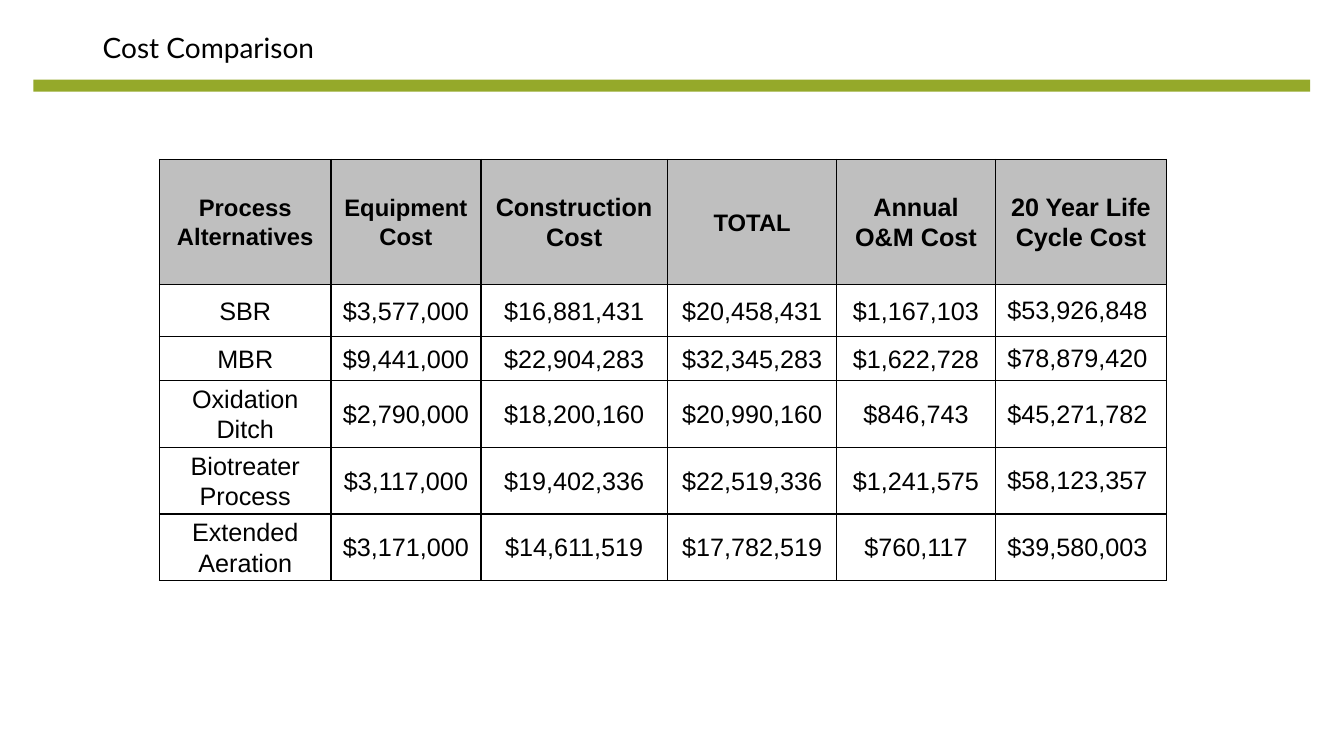
from lxml.etree import SubElement
from pptx import Presentation
from pptx.dml.color import RGBColor
from pptx.enum.shapes import MSO_SHAPE
from pptx.enum.text import MSO_ANCHOR, PP_ALIGN
from pptx.oxml.ns import qn
from pptx.util import Cm, Pt

BLACK = RGBColor(0x00, 0x00, 0x00)
GREEN = RGBColor(0x95, 0xA9, 0x2A)
GREY = RGBColor(0xBF, 0xBF, 0xBF)

COL_WIDTHS = [4.32, 3.78, 4.7, 4.27, 3.99, 4.32]
ROW_HEIGHTS = [3.15, 1.3, 1.12, 1.68, 1.68, 1.68]
HEADER = [("Process Alternatives", 17), ("Equipment Cost", 17), ("Construction Cost", 18),
          ("TOTAL", 17), ("Annual O&M Cost", 18), ("20 Year Life Cycle Cost", 18)]
COSTS = [
    ["SBR", "$3,577,000", "$16,881,431", "$20,458,431", "$1,167,103", "$53,926,848"],
    ["MBR", "$9,441,000", "$22,904,283", "$32,345,283", "$1,622,728", "$78,879,420"],
    ["Oxidation Ditch", "$2,790,000", "$18,200,160", "$20,990,160", "$846,743", "$45,271,782"],
    ["Biotreater Process", "$3,117,000", "$19,402,336", "$22,519,336", "$1,241,575", "$58,123,357"],
    ["Extended Aeration", "$3,171,000", "$14,611,519", "$17,782,519", "$760,117", "$39,580,003"],
]
HEAD_FONT = {"name": "Arial", "bold": True}
BODY_FONT = {"name": "Arial", "size": Pt(18), "bold": False}
TITLE_FONT = {"name": "Lato", "size": Pt(20)}
CELL = {"margin_left": Cm(0.18), "margin_right": Cm(0.18), "margin_top": 0,
        "margin_bottom": 0, "vertical_anchor": MSO_ANCHOR.MIDDLE}
LIFE_CYCLE_CELL = {**CELL, "margin_left": Cm(0.02), "margin_right": Cm(0.2),
                   "margin_top": Cm(0.02)}
CELL_PARAGRAPH = {"alignment": PP_ALIGN.CENTER, "line_spacing": 1.07}
LIFE_CYCLE_PARAGRAPH = {**CELL_PARAGRAPH, "line_spacing": 1.0}
TABLE_FLAGS = {"first_row": False, "horz_banding": False}


def apply(target, values):
    """Set every attribute in values on target."""
    for name, value in values.items():
        setattr(target, name, value)


def write(p, text, font):
    """Add one formatted run to a paragraph."""
    r = p.add_run()
    r.text = text
    apply(r.font, font)
    r.font.color.rgb = BLACK


def add_title(s, text):
    """Add the slide title."""
    sp = s.shapes.add_textbox(Cm(2.34), Cm(0.64), Cm(16.08), Cm(1.47))
    tf = sp.text_frame
    tf.word_wrap = True
    write(tf.paragraphs[0], text, TITLE_FONT)


def add_rule(s):
    """Add the green bar under the title."""
    sp = s.shapes.add_shape(MSO_SHAPE.RECTANGLE, Cm(0.84), Cm(2.01), Cm(32.18), Cm(0.3))
    sp.shadow.inherit = False
    sp.fill.solid()
    sp.fill.fore_color.rgb = GREEN
    sp.line.fill.background()


def add_borders(cell):
    """Draw a thin black line on each side of a cell."""
    tc_pr = cell._tc.get_or_add_tcPr()
    for i, side in enumerate(("lnL", "lnR", "lnT", "lnB")):
        ln = tc_pr.makeelement(qn(f"a:{side}"), {"w": str(Pt(1))})
        fill = SubElement(ln, qn("a:solidFill"))
        SubElement(fill, qn("a:srgbClr"), val=str(BLACK))
        tc_pr.insert(i, ln)


def fill_cell(cell, text, font, fmt, paragraph, fill=None):
    """Format one table cell and write its text."""
    apply(cell, fmt)
    if fill is None:
        cell.fill.background()
    else:
        cell.fill.solid()
        cell.fill.fore_color.rgb = fill
    add_borders(cell)
    p = cell.text_frame.paragraphs[0]
    apply(p, paragraph)
    write(p, text, font)


def add_cost_table(s):
    """Add the table of costs for each process."""
    table = s.shapes.add_table(len(ROW_HEIGHTS), len(COL_WIDTHS), Cm(4.02), Cm(4.02),
                               Cm(sum(COL_WIDTHS)), Cm(sum(ROW_HEIGHTS))).table
    apply(table, TABLE_FLAGS)
    for column, width in zip(table.columns, COL_WIDTHS):
        column.width = Cm(width)
    for row, height in zip(table.rows, ROW_HEIGHTS):
        row.height = Cm(height)
    for j, (text, size) in enumerate(HEADER):
        font = {**HEAD_FONT, "size": Pt(size)}
        fill_cell(table.cell(0, j), text, font, CELL, CELL_PARAGRAPH, GREY)
    for i, costs in enumerate(COSTS, 1):
        for j, text in enumerate(costs):
            last = j == len(costs) - 1
            fill_cell(table.cell(i, j), text, BODY_FONT,
                      LIFE_CYCLE_CELL if last else CELL,
                      LIFE_CYCLE_PARAGRAPH if last else CELL_PARAGRAPH)


def main():
    """Build and save the cost comparison slide."""
    prs = Presentation()
    apply(prs, {"slide_width": Cm(33.87), "slide_height": Cm(19.05)})
    s = prs.slides.add_slide(prs.slide_layouts[6])
    add_rule(s)
    add_title(s, "Cost Comparison")
    add_cost_table(s)
    prs.save("out.pptx")


if __name__ == "__main__":
    main()
